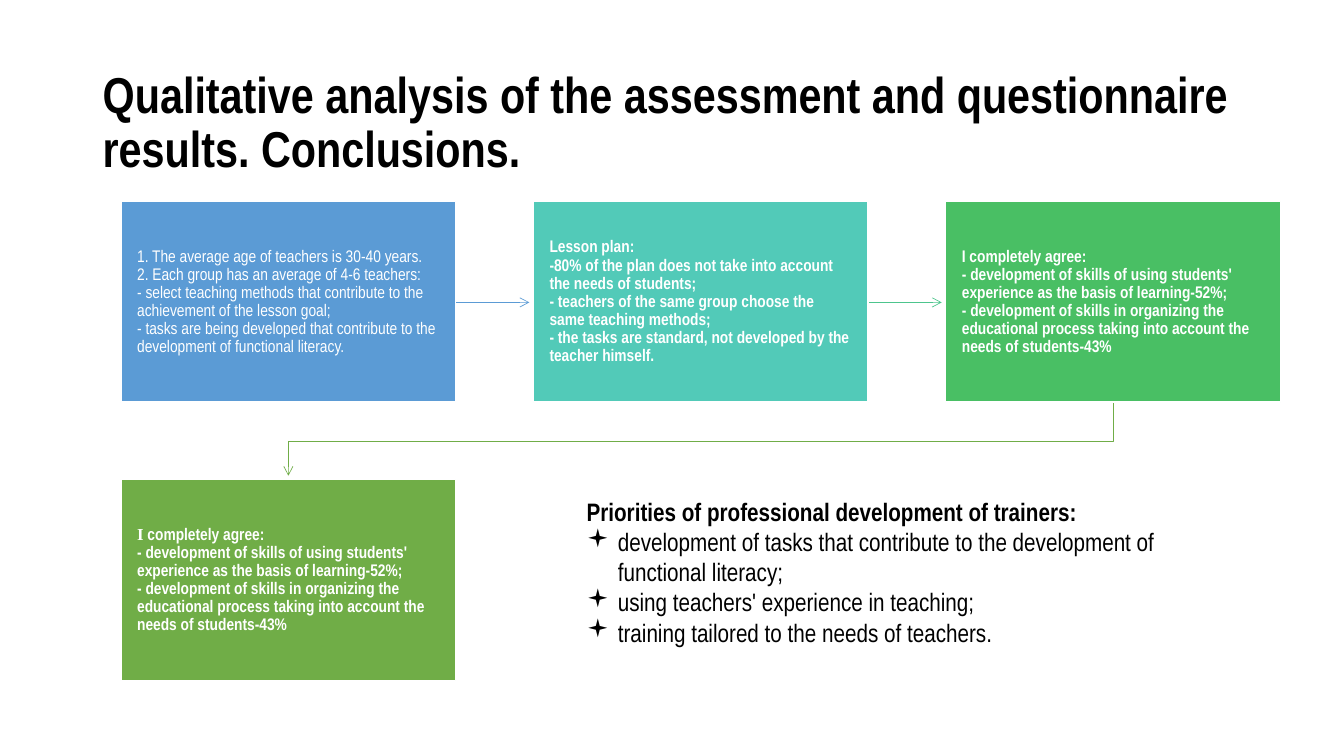
from dataclasses import dataclass

from lxml.etree import SubElement
from pptx import Presentation
from pptx.dml.color import RGBColor
from pptx.enum.shapes import MSO_CONNECTOR, MSO_SHAPE
from pptx.enum.text import MSO_ANCHOR, MSO_AUTO_SIZE
from pptx.oxml.ns import qn
from pptx.util import Emu, Pt

PX = 9144  # 100 px to the inch
NARROW, SERIF = "Arial Narrow", "Times New Roman"
COLORS = {
    "black": "000000", "white": "FFFFFF", "blue": "5B9BD5", "teal": "52CAB8",
    "green": "49BF64", "olive": "70AD47", "sea": "4DC58D",
}

# Grid of cards
LEFT, TOP, WIDTH, HEIGHT = 120, 200, 332, 199
STEP_X, STEP_Y = 409, 276
ARROW_GAP = 4


@dataclass(frozen=True)
class Run:
    text: str
    bold: bool = True
    font: str = NARROW


@dataclass(frozen=True)
class Card:
    column: int
    row: int
    fill: str
    runs: tuple[Run, ...]

    @property
    def left(self) -> int:
        return LEFT + self.column * STEP_X

    @property
    def top(self) -> int:
        return TOP + self.row * STEP_Y

    @property
    def center(self) -> int:
        return self.left + WIDTH // 2


AGREEMENT = (
    " completely agree: \n"
    "- development of skills of using students' experience as the basis of learning-52%; \n"
    "- development of skills in organizing the educational process taking into account "
    "the needs of students-43%"
)
CARDS = (
    Card(0, 0, "blue", (Run(
        "1. The average age of teachers is 30-40 years.\n"
        "2. Each group has an average of 4-6 teachers:\n"
        "- select teaching methods that contribute to the achievement of the lesson goal;\n"
        "- tasks are being developed that contribute to the development of functional literacy.",
        bold=False),)),
    Card(1, 0, "teal", (Run(
        "Lesson plan:\n"
        "-80% of the plan does not take into account the needs of students;\n"
        "- teachers of the same group choose the same teaching methods;\n"
        "- the tasks are standard, not developed by the teacher himself."),)),
    Card(2, 0, "green", (Run("I" + AGREEMENT),)),
    Card(0, 1, "olive", (Run("I", font=SERIF), Run(AGREEMENT))),
)
PRIORITIES = (
    "development of tasks that contribute to the development of functional literacy;",
    "using teachers' experience in teaching;",
    "training tailored to the needs of teachers.",
)


def px(value: int) -> Emu:
    return Emu(value * PX)


def rgb(name: str) -> RGBColor:
    return RGBColor.from_string(COLORS[name])


def add_run(paragraph, run: Run, size: int, color: str) -> None:
    for index, line in enumerate(run.text.split("\n")):
        if index:
            paragraph.add_line_break()
        part = paragraph.add_run()
        part.text = line
        part.font.name = run.font
        part.font.size = Pt(size)
        part.font.bold = run.bold
        part.font.color.rgb = rgb(color)


def add_text_box(slide, left: int, top: int, width: int, height: int):
    frame = slide.shapes.add_textbox(px(left), px(top), px(width), px(height)).text_frame
    frame.word_wrap = True
    return frame


def add_card(slide, card: Card) -> None:
    shape = slide.shapes.add_shape(
        MSO_SHAPE.RECTANGLE, px(card.left), px(card.top), px(WIDTH), px(HEIGHT))
    shape.shadow.inherit = False
    shape.fill.solid()
    shape.fill.fore_color.rgb = rgb(card.fill)
    shape.line.color.rgb = rgb("white")
    shape.line.width = Pt(1)
    frame = shape.text_frame
    frame.word_wrap = True
    frame.vertical_anchor = MSO_ANCHOR.MIDDLE
    frame.margin_left = frame.margin_right = px(16)
    frame.margin_top = frame.margin_bottom = px(17)
    paragraph = frame.paragraphs[0]
    paragraph.alignment = 1  # left
    paragraph.line_spacing = 0.9
    for run in card.runs:
        add_run(paragraph, run, 12, "white")


def style_arrow(shape, color: str) -> None:
    shape.line.color.rgb = rgb(color)
    shape.line.width = Pt(0.5)
    SubElement(shape.line._get_or_add_ln(), qn("a:tailEnd"), type="arrow")
    SubElement(shape._element.spPr, qn("a:effectLst"))


def add_straight_arrow(slide, source: Card, target: Card, color: str) -> None:
    middle = px(source.top + HEIGHT // 2 + 1)
    arrow = slide.shapes.add_connector(
        MSO_CONNECTOR.STRAIGHT, px(source.left + WIDTH), middle,
        px(target.left - ARROW_GAP), middle)
    style_arrow(arrow, color)


def add_return_arrow(slide, source: Card, target: Card, color: str) -> None:
    bottom = source.top + HEIGHT
    turn = (bottom + target.top) // 2 + 1
    builder = slide.shapes.build_freeform(source.center, bottom, scale=PX)
    builder.add_line_segments(
        [(source.center, turn), (target.center, turn),
         (target.center, target.top - ARROW_GAP)], close=False)
    arrow = builder.convert_to_shape()
    arrow.fill.background()
    style_arrow(arrow, color)


def add_title(slide) -> None:
    frame = add_text_box(slide, 92, 61, 1150, 124)
    frame.vertical_anchor = MSO_ANCHOR.MIDDLE
    paragraph = frame.paragraphs[0]
    paragraph.line_spacing = 0.9
    add_run(paragraph, Run(
        "Qualitative analysis of the assessment and questionnaire results. Conclusions."),
        36, "black")


def add_priorities(slide) -> None:
    frame = add_text_box(slide, 572, 487, 620, 162)
    frame.auto_size = MSO_AUTO_SIZE.SHAPE_TO_FIT_TEXT
    add_run(frame.paragraphs[0],
            Run("Priorities of professional development of trainers:"), 18, "black")
    for priority in PRIORITIES:
        paragraph = frame.add_paragraph()
        properties = paragraph._p.get_or_add_pPr()
        properties.set("marL", str(px(31)))
        properties.set("indent", str(-px(31)))
        SubElement(properties, qn("a:buFont"), typeface="Wingdings")
        SubElement(properties, qn("a:buChar"), char="▪")
        add_run(paragraph, Run(priority, bold=False), 18, "black")


def main() -> None:
    presentation = Presentation()
    presentation.slide_width, presentation.slide_height = px(1333), px(750)
    slide = presentation.slides.add_slide(presentation.slide_layouts[6])
    add_title(slide)
    first, second, third, fourth = CARDS
    add_straight_arrow(slide, first, second, "blue")
    add_straight_arrow(slide, second, third, "sea")
    add_return_arrow(slide, third, fourth, "olive")
    for card in CARDS:
        add_card(slide, card)
    add_priorities(slide)
    presentation.save("out.pptx")


if __name__ == "__main__":
    main()
